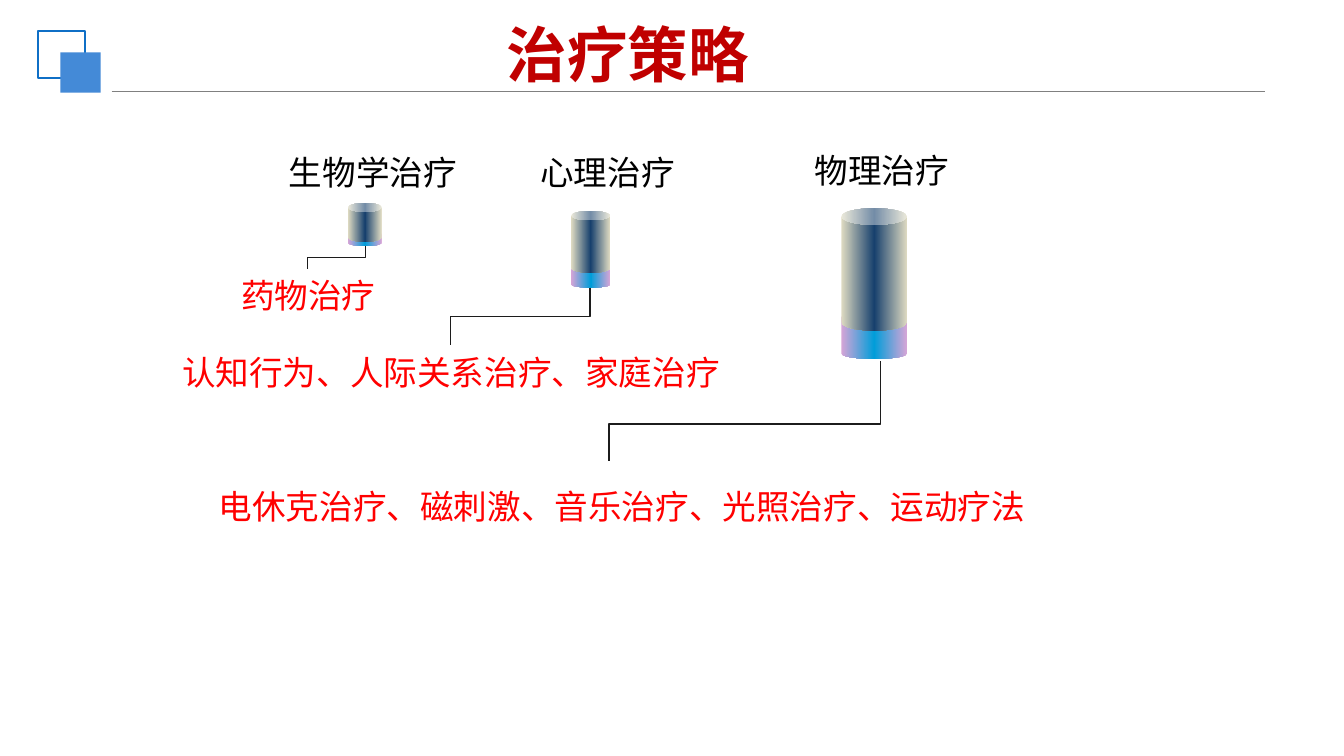
import copy

import pptx
import pptx.dml.color
import pptx.enum.shapes
import pptx.enum.text
import pptx.oxml
import pptx.oxml.ns
import pptx.util

Inches = pptx.util.Inches
RGBColor = pptx.dml.color.RGBColor
Shapes = pptx.enum.shapes.MSO_SHAPE
Connectors = pptx.enum.shapes.MSO_CONNECTOR
Align = pptx.enum.text.PP_ALIGN
qn = pptx.oxml.ns.qn

GREY = RGBColor(0x80, 0x80, 0x80)
OUTLINE_BLUE = RGBColor(0x0F, 0x6F, 0xC6)
SQUARE_BLUE = RGBColor(0x44, 0x8A, 0xD7)
DARK_RED = RGBColor(0xC0, 0x00, 0x00)
RED = RGBColor(0xFF, 0x00, 0x00)
BLACK = RGBColor(0x00, 0x00, 0x00)
CHARCOAL = RGBColor(0x1C, 0x1C, 0x1C)
PINK = RGBColor(0xD7, 0xA5, 0xD7)
CYAN = RGBColor(0x00, 0x9D, 0xD9)
SAND = RGBColor(0xDF, 0xDB, 0xC2)
NAVY = RGBColor(0x17, 0x40, 0x6D)

CJK_FONT = "Noto Sans CJK SC"
HEADING = {"name": "Calibri", "size": pptx.util.Pt(18), "color": BLACK}
METHOD = {"name": CJK_FONT, "size": pptx.util.Pt(18), "color": RED}
TITLE = {"name": CJK_FONT, "size": pptx.util.Pt(32.4), "color": DARK_RED, "bold": True}

# Boxes are (left, top, width, height) in inches; a can is its box and its rim adjustment.
THERAPIES = [
    {"heading": ("生物学治疗", (2, 1.08, 1.55, 0.4)),
     "base": ((2.59, 1.72, 0.25, 0.11), 0.4),
     "body": ((2.59, 1.51, 0.25, 0.29), 0.27),
     "link": ((2.29, 1.83, 0.43, 0.17), 0.5),
     "methods": ("药物治疗", (1.03, 2, 2.53, 0.4)),
     "paragraph": {"alignment": Align.CENTER}},
    {"heading": ("心理治疗", (3.81, 1.08, 1.42, 0.4)),
     "base": ((4.25, 1.98, 0.29, 0.16), 0.27),
     "body": ((4.25, 1.57, 0.29, 0.46), 0.24),
     "link": ((3.35, 2.14, 1.04, 0.43), 0.5),
     "methods": ("认知行为、人际关系治疗、家庭治疗", (1.17, 2.57, 4.37, 0.4)),
     "paragraph": {"alignment": Align.CENTER}},
    {"heading": ("物理治疗", (5.87, 1.07, 1.38, 0.4)),
     "base": ((6.26, 2.32, 0.49, 0.35), 0.22),
     "body": ((6.26, 1.55, 0.49, 0.91), 0.25),
     "link": ((4.53, 2.69, 2.02, 0.74), 0.63),
     "methods": ("电休克治疗、磁刺激、音乐治疗、光照治疗、运动疗法",
                 (1.53, 3.65, 6.83, 0.31)),
     "paragraph": {"alignment": Align.LEFT, "line_spacing": 0.7}},
]


def add_text(slide, text, box, font_format, paragraph_format,
             anchor=pptx.enum.text.MSO_ANCHOR.TOP):
    text_box = slide.shapes.add_textbox(*map(Inches, box))
    frame = text_box.text_frame
    frame.word_wrap = True
    frame.vertical_anchor = anchor
    paragraph = frame.paragraphs[0]
    for name, value in paragraph_format.items():
        setattr(paragraph, name, value)
    run = paragraph.add_run()
    run.text = text
    for name, value in font_format.items():
        if name == "color":
            run.font.color.rgb = value
        else:
            setattr(run.font, name, value)
    latin = run.font._element.find(qn("a:latin"))
    latin.addnext(pptx.oxml.parse_xml(
        f'<a:ea {pptx.oxml.ns.nsdecls("a")} typeface="{CJK_FONT}"/>'))


def add_line(slide, kind, start, end, color):
    line = slide.shapes.add_connector(kind, *map(Inches, (*start, *end)))
    line.line.color.rgb = color
    line.line.width = pptx.util.Pt(0.75)
    line._element.spPr.append(pptx.oxml.parse_xml(
        f'<a:effectLst {pptx.oxml.ns.nsdecls("a")}/>'))
    return line


def add_link(slide, box, bend):
    """Run down, left and down again from the box's top right to its bottom left."""
    left, top, width, height = box
    center_x, center_y = left + width / 2, top + height / 2
    start = (center_x - height / 2, center_y - width / 2)
    end = (center_x + height / 2, center_y + width / 2)
    properties = add_line(slide, Connectors.ELBOW, start, end, CHARCOAL)._element.spPr
    properties.find(qn("a:xfrm")).set("rot", str(90 * 60000))
    guides = properties.find(qn("a:prstGeom")).find(qn("a:avLst"))
    guides.append(pptx.oxml.parse_xml(
        f'<a:gd {pptx.oxml.ns.nsdecls("a")} name="adj1" fmla="val {round(bend * 100000)}"/>'))


def add_can(slide, box, rim, edge_color, middle_color):
    can = slide.shapes.add_shape(Shapes.CAN, *map(Inches, box))
    can.adjustments[0] = rim
    can.shadow.inherit = False
    can.line.fill.background()
    can.fill.gradient()
    can.fill.gradient_angle = 0
    stop_list = can._element.spPr.find(qn("a:gradFill")).find(qn("a:gsLst"))
    stop_list.append(copy.deepcopy(stop_list[0]))
    colors = (edge_color, middle_color, edge_color)
    for index, (stop, color) in enumerate(zip(can.fill.gradient_stops, colors)):
        stop.position = index / 2
        stop.color.rgb = color


def add_square(slide, left, top, side):
    square = slide.shapes.add_shape(Shapes.RECTANGLE, *map(Inches, (left, top, side, side)))
    square.shadow.inherit = False
    return square


def add_header(slide, box):
    left, top, width, height = box
    add_line(slide, Connectors.STRAIGHT, (left + 0.55, top + height),
             (left + width, top + height), GREY)
    outlined = add_square(slide, left, top + 0.1, 0.35)
    outlined.fill.background()
    outlined.line.color.rgb = OUTLINE_BLUE
    outlined.line.width = pptx.util.Pt(1)
    filled = add_square(slide, left + 0.17, top + 0.26, 0.3)
    filled.fill.solid()
    filled.fill.fore_color.rgb = SQUARE_BLUE
    filled.line.fill.background()
    add_text(slide, "治疗策略", (left + 1.81, top, 5.16, 0.53), TITLE,
             {"alignment": Align.CENTER}, pptx.enum.text.MSO_ANCHOR.MIDDLE)


def add_therapy(slide, therapy):
    add_can(slide, *therapy["base"], PINK, CYAN)
    add_text(slide, *therapy["heading"], HEADING, {"alignment": Align.CENTER})
    add_text(slide, *therapy["methods"], METHOD, therapy["paragraph"])
    add_link(slide, *therapy["link"])
    add_can(slide, *therapy["body"], SAND, NAVY)


def main():
    presentation = pptx.Presentation()
    presentation.slide_width = Inches(10)
    presentation.slide_height = presentation.slide_width * 9 // 16
    slide = presentation.slides.add_slide(presentation.slide_layouts[6])
    add_header(slide, (0.28, 0.13, 9.13, 0.55))
    for therapy in THERAPIES:
        add_therapy(slide, therapy)
    presentation.save("out.pptx")


if __name__ == "__main__":
    main()
